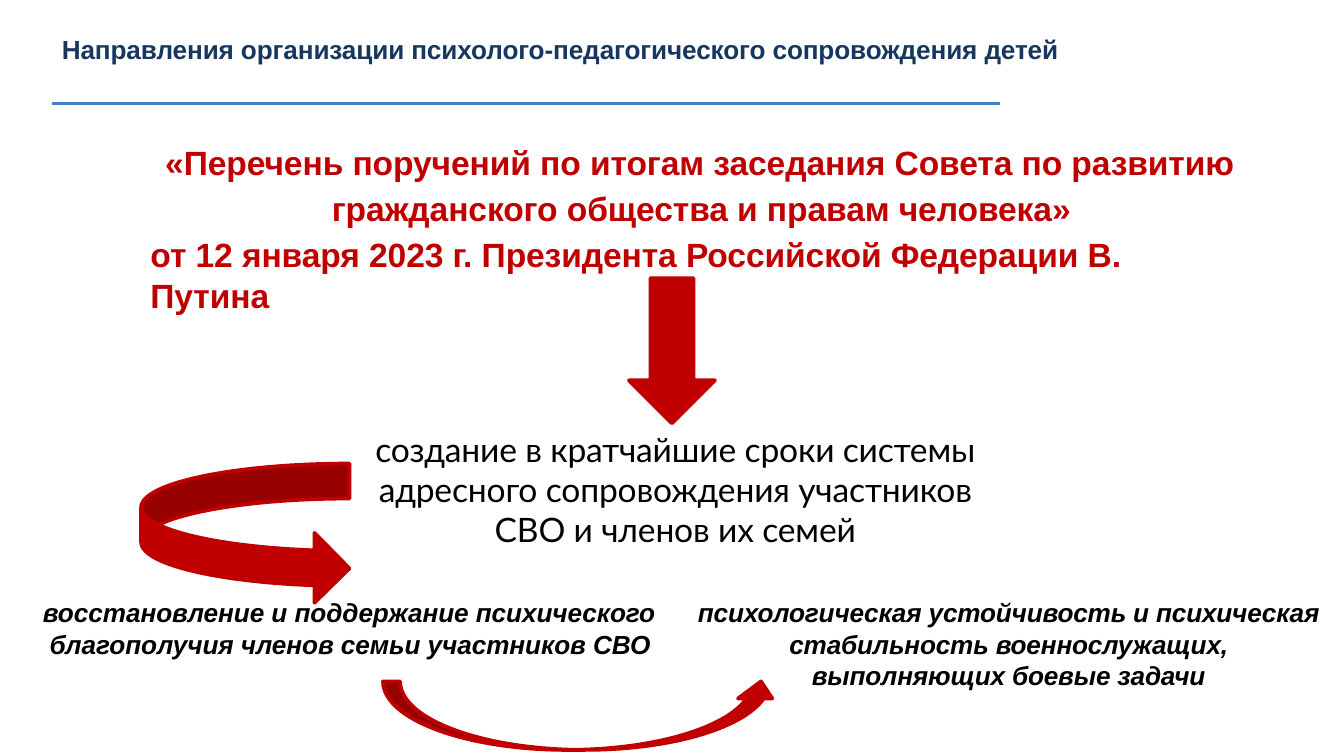
from pptx import Presentation
from pptx.dml.color import RGBColor
from pptx.enum.shapes import MSO_CONNECTOR, MSO_SHAPE
from pptx.enum.text import MSO_ANCHOR, MSO_AUTO_SIZE, PP_ALIGN
from pptx.oxml import parse_xml
from pptx.oxml.ns import nsdecls
from pptx.util import Pt

PX = 9144  # EMU in one px, 100 px to the inch
SLIDE_WIDTH = 1000

NAVY = RGBColor(0x17, 0x37, 0x5E)
BLUE = RGBColor(0x44, 0x80, 0xC2)
RED = RGBColor(0xC0, 0x00, 0x00)
BLACK = RGBColor(0x00, 0x00, 0x00)

TITLE_FONT = dict(name="Arial", size=Pt(14), bold=True, italic=False)
DECREE_FONT = dict(name="Arial", size=Pt(18), bold=True)
GOAL_FONT = dict(name="Lato", size=Pt(18), bold=False)
OUTCOME_FONT = dict(name="Arial", size=Pt(14), bold=True, italic=True)
FRAME = dict(margin_left=0, margin_right=0, margin_top=PX, margin_bottom=0,
             word_wrap=True, vertical_anchor=MSO_ANCHOR.TOP,
             auto_size=MSO_AUTO_SIZE.NONE)


def apply(target, values):
    for attribute, value in values.items():
        setattr(target, attribute, value)


def emu(*lengths):
    return [length * PX for length in lengths]


def place(shape, box):
    apply(shape, dict(zip(("left", "top", "width", "height"), emu(*box))))


def write(frame, paragraphs, font, color, tracking=-10):
    """Fill a frame; each paragraph is (text, format, left margin, indent)."""
    apply(frame, FRAME)
    for number, (text, layout, margin, indent) in enumerate(paragraphs):
        paragraph = frame.add_paragraph() if number else frame.paragraphs[0]
        paragraph.text = text
        apply(paragraph, layout)
        properties = paragraph._p.get_or_add_pPr()
        properties.set("marL", str(margin * PX))
        properties.set("indent", str(indent * PX))
        for run in paragraph.runs:
            apply(run.font, font)
            run.font.color.rgb = color
            run._r.get_or_add_rPr().set("spc", str(tracking))


def add_text(slide, box, *content, **options):
    write(slide.shapes.add_textbox(*emu(*box)).text_frame, *content, **options)


def add_arrow(slide, kind, box):
    arrow = slide.shapes.add_shape(kind, *emu(*box))
    arrow.shadow.inherit = False
    arrow.fill.solid()
    arrow.fill.fore_color.rgb = RED
    arrow.line.color.rgb = RED
    arrow.line.width = Pt(2)


def add_header(slide, box):
    left, top, width, height = box
    title = slide.shapes.title
    place(title, box)
    layout = dict(alignment=PP_ALIGN.LEFT, space_before=Pt(1))
    write(title.text_frame,
          [("Направления организации психолого-педагогического сопровождения детей",
            layout, 1, 0)], TITLE_FONT, NAVY, tracking=-8)

    # Rule under the title
    rule = slide.shapes.add_connector(
        MSO_CONNECTOR.STRAIGHT, *emu(left - 6, top + 53, left + 699, top + 53))
    rule.line.color.rgb = BLUE
    rule.line.width = Pt(1.5)
    rule._element.spPr.append(parse_xml(f"<a:effectLst {nsdecls('a')}/>"))


def add_decree(slide, box):
    left, top, width, height = box
    add_text(slide, box, [
        ("«Перечень поручений по итогам заседания Совета по развитию "
         "гражданского общества и правам человека»",
         dict(line_spacing=1.15, space_before=Pt(1)), 136, -124),
        ("от 12 января 2023 г. Президента Российской Федерации В. Путина",
         dict(space_before=Pt(3.2)), 1, 0),
    ], DECREE_FONT, RED, tracking=-5)
    add_arrow(slide, MSO_SHAPE.DOWN_ARROW, (left + 357, top + 107, 64, 108))


def add_goal(slide, box):
    left, top, width, height = box
    layout = dict(alignment=PP_ALIGN.CENTER, space_before=Pt(1))
    add_text(slide, box,
             [("создание в кратчайшие сроки системы адресного сопровождения "
               "участников СВО и членов их семей", layout, 1, 0)],
             GOAL_FONT, BLACK, tracking=-8)
    add_arrow(slide, MSO_SHAPE.CURVED_RIGHT_ARROW, (left - 170, top + 27, 155, 104))


def add_outcomes(slide, box):
    left, top, width, height = box
    # Families
    add_text(slide, (left, top, 459, 50), [
        ("восстановление и поддержание психического", dict(space_before=Pt(1)), 1, 0),
        ("благополучия членов семьи участников СВО", dict(space_before=Pt(0)), 6, 0),
    ], OUTCOME_FONT, BLACK, tracking=-5)
    # Servicemen
    layout = dict(alignment=PP_ALIGN.CENTER, space_before=Pt(1))
    add_text(slide, (left + 485, top, 468, 73),
             [("психологическая устойчивость и психическая стабильность "
               "военнослужащих, выполняющих боевые задачи", layout, 1, 0)],
             OUTCOME_FONT, BLACK)
    # Link from the first outcome to the second
    add_arrow(slide, MSO_SHAPE.CURVED_UP_ARROW, (left + 254, top + 64, 294, 51))


def main():
    deck = Presentation()
    deck.slide_width = SLIDE_WIDTH * PX
    deck.slide_height = deck.slide_width * 9 // 16
    slide = deck.slides.add_slide(deck.slide_layouts.get_by_name("Title Only"))
    add_header(slide, (45, 24, 910, 25))
    add_decree(slide, (111, 100, 814, 106))
    add_goal(slide, (275, 318, 454, 93))
    add_outcomes(slide, (31, 443, 953, 115))
    deck.save("out.pptx")


if __name__ == "__main__":
    main()
